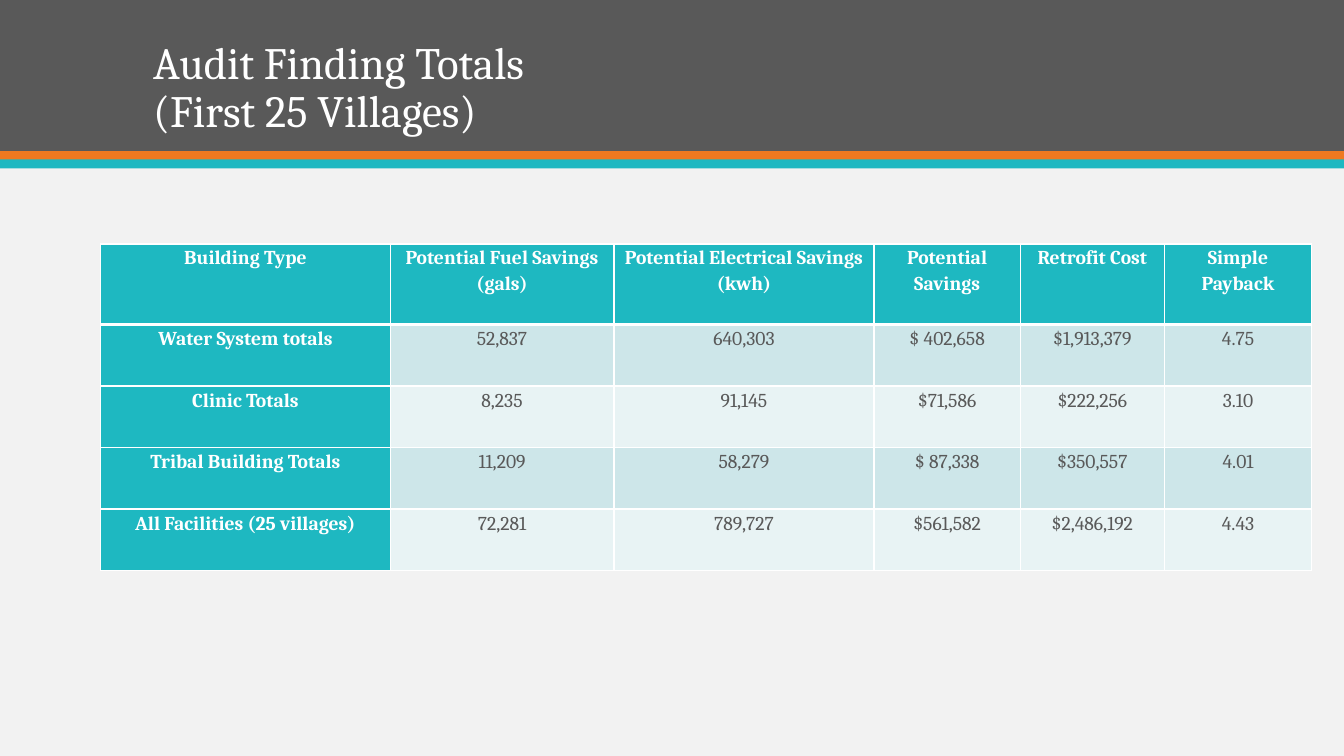
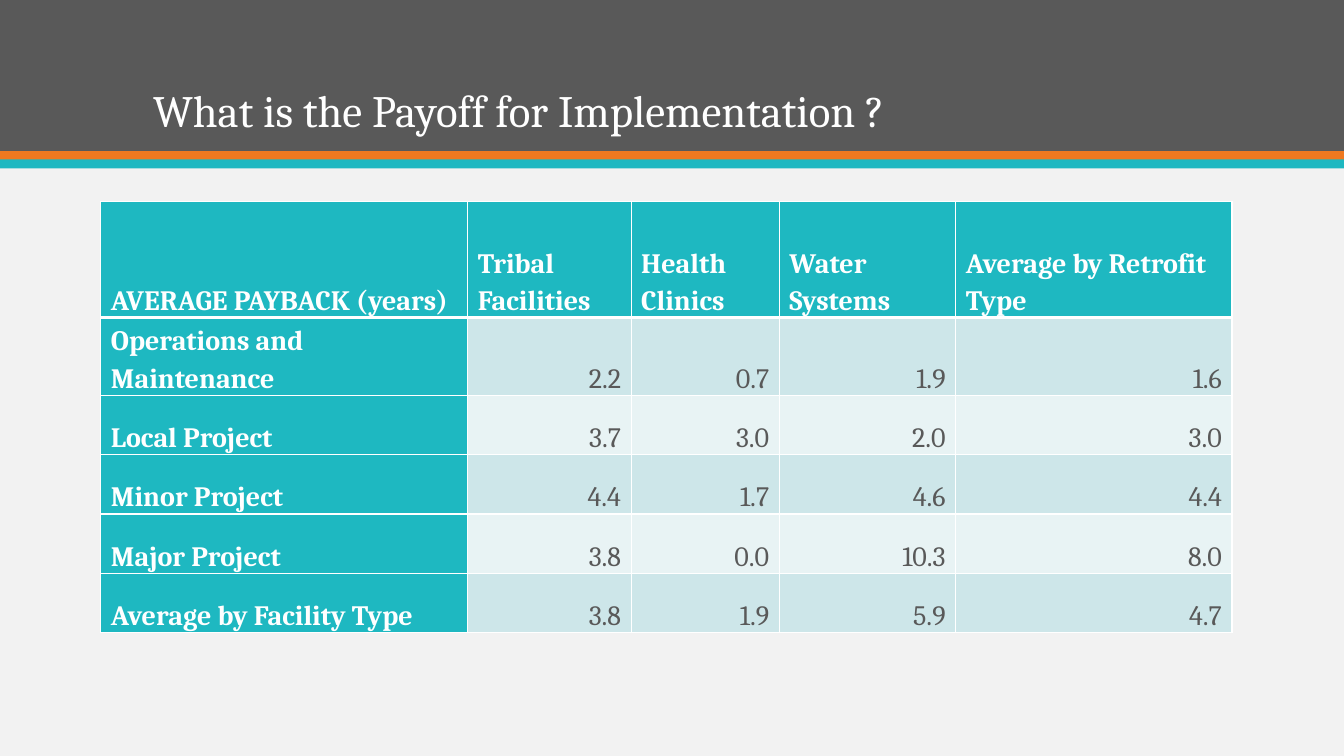
from lxml import etree
from pptx import Presentation
from pptx import util as u
from pptx.dml.color import RGBColor
from pptx.enum import shapes, text
from pptx.oxml.ns import qn

COLORS = {
    "page": "F2F2F2",
    "gray": "595959",
    "orange": "EF7920",
    "teal": "1EB8C1",
    "white": "FFFFFF",
    "band_dark": "CDE6E9",
    "band_light": "E8F3F4",
}
FONT = "Cambria"
PAGE_WIDTH, PAGE_HEIGHT = 13.33, 7.5
HEADER_BANDS = [(0, 1.5, "gray"), (1.5, 0.09, "orange"), (1.58, 0.09, "teal")]

# Table content
AUDIT_ROWS = [
    ["Building Type", "Potential Fuel Savings (gals)",
     "Potential Electrical Savings (kwh)", "Potential Savings",
     "Retrofit Cost", "Simple Payback"],
    ["Water System totals", "52,837", "640,303", "$ 402,658", "$1,913,379", "4.75"],
    ["Clinic Totals", "8,235", "91,145", "$71,586", "$222,256", "3.10"],
    ["Tribal Building Totals", "11,209", "58,279", "$ 87,338", "$350,557", "4.01"],
    ["All Facilities (25 villages)", "72,281", "789,727", "$561,582",
     "$2,486,192", "4.43"],
]
PAYBACK_ROWS = [
    ["AVERAGE PAYBACK (years)", "Tribal Facilities", "Health Clinics",
     "Water Systems", "Average by Retrofit Type"],
    ["Operations and Maintenance", "2.2", "0.7", "1.9", "1.6"],
    ["Local Project", "3.7", "3.0", "2.0", "3.0"],
    ["Minor Project", "4.4", "1.7", "4.6", "4.4"],
    ["Major Project", "3.8", "0.0", "10.3", "8.0"],
    ["Average by Facility Type", "3.8", "1.9", "5.9", "4.7"],
]


def rgb(name):
    return RGBColor.from_string(COLORS[name])


def write_text(frame, content, *, size, color="white", bold=False,
               align=text.PP_ALIGN.LEFT, anchor=text.MSO_ANCHOR.BOTTOM, spacing=1.0):
    """Fill a text frame with one formatted paragraph; \\v breaks the line."""
    frame.word_wrap = True
    frame.vertical_anchor = anchor
    para = frame.paragraphs[0]
    para.text = content
    para.alignment = align
    para.line_spacing = spacing
    for span in para.runs:
        span.font.name = FONT
        span.font.size = u.Pt(size)
        span.font.bold = bold
        span.font.color.rgb = rgb(color)


def add_band(page, top, height, color):
    band = page.shapes.add_shape(
        shapes.MSO_SHAPE.RECTANGLE, 0, u.Inches(top),
        u.Inches(PAGE_WIDTH), u.Inches(height))
    band.shadow.inherit = False
    band.fill.solid()
    band.fill.fore_color.rgb = rgb(color)
    band.line.fill.background()


def add_page(deck, title):
    """Add a slide with the shared background, header bands and title."""
    page = deck.slides.add_slide(deck.slide_layouts[6])
    page.background.fill.solid()
    page.background.fill.fore_color.rgb = rgb("page")
    for top, height, color in HEADER_BANDS:
        add_band(page, top, height, color)
    box = page.shapes.add_textbox(
        u.Inches(1.42), u.Inches(0.28), u.Inches(10.5), u.Inches(1.13))
    write_text(box.text_frame, title, size=32, spacing=0.9)
    return page


def set_borders(cell, **widths):
    """Draw white cell borders; widths in points, keyed by side L, R, T, B."""
    properties = cell._tc.get_or_add_tcPr()
    for side, width in widths.items():
        line = etree.SubElement(properties, qn(f"a:ln{side}"), w=str(u.Pt(width)))
        fill = etree.SubElement(line, qn("a:solidFill"))
        etree.SubElement(fill, qn("a:srgbClr"), val=COLORS["white"])


def add_data_table(page, rows, *, top, widths, heights, size, inset, anchor,
                   label_align, value_align):
    """Add a banded table with a teal header row and a teal label column."""
    frame = page.shapes.add_table(
        len(rows), len(widths), u.Inches(1), u.Inches(top),
        u.Inches(sum(widths)), u.Inches(sum(heights)))
    table = frame.table
    table.first_col = True
    for column, width in zip(table.columns, widths):
        column.width = u.Inches(width)
    for row, height in zip(table.rows, heights):
        row.height = u.Inches(height)

    for r, values in enumerate(rows):
        band = "band_dark" if r % 2 else "band_light"
        for c, value in enumerate(values):
            cell = table.cell(r, c)
            is_label = r == 0 or c == 0
            # The rule under the header row is heavier
            set_borders(cell, L=1, R=1, T=3 if r == 1 else 1, B=3 if r == 0 else 1)
            cell.fill.solid()
            cell.fill.fore_color.rgb = rgb("teal" if is_label else band)
            cell.margin_left = cell.margin_right = u.Inches(inset)
            cell.margin_top = cell.margin_bottom = 0
            cell.vertical_anchor = anchor
            write_text(cell.text_frame, value, size=size, bold=is_label,
                       color="white" if is_label else "gray", spacing=1.15,
                       align=label_align if is_label else value_align, anchor=None)


def main():
    deck = Presentation()
    deck.slide_width = u.Inches(PAGE_WIDTH)
    deck.slide_height = u.Inches(PAGE_HEIGHT)

    # Audit totals
    page = add_page(deck, "Audit Finding Totals\v(First 25 Villages)")
    add_data_table(page, AUDIT_ROWS, top=2.42,
                   widths=[2.87, 2.22, 2.58, 1.45, 1.43, 1.46],
                   heights=[0.8] + [0.61] * 4, size=14, inset=0.09,
                   anchor=text.MSO_ANCHOR.TOP,
                   label_align=text.PP_ALIGN.CENTER, value_align=text.PP_ALIGN.CENTER)

    # Payback by project and facility type
    page = add_page(deck, "What is the Payoff for Implementation ?")
    add_data_table(page, PAYBACK_ROWS, top=2,
                   widths=[3.64, 1.62, 1.47, 1.75, 2.74],
                   heights=[1.15, 0.77] + [0.59] * 4, size=20, inset=0.1,
                   anchor=text.MSO_ANCHOR.BOTTOM,
                   label_align=text.PP_ALIGN.LEFT, value_align=text.PP_ALIGN.RIGHT)

    deck.save("out.pptx")


if __name__ == "__main__":
    main()
